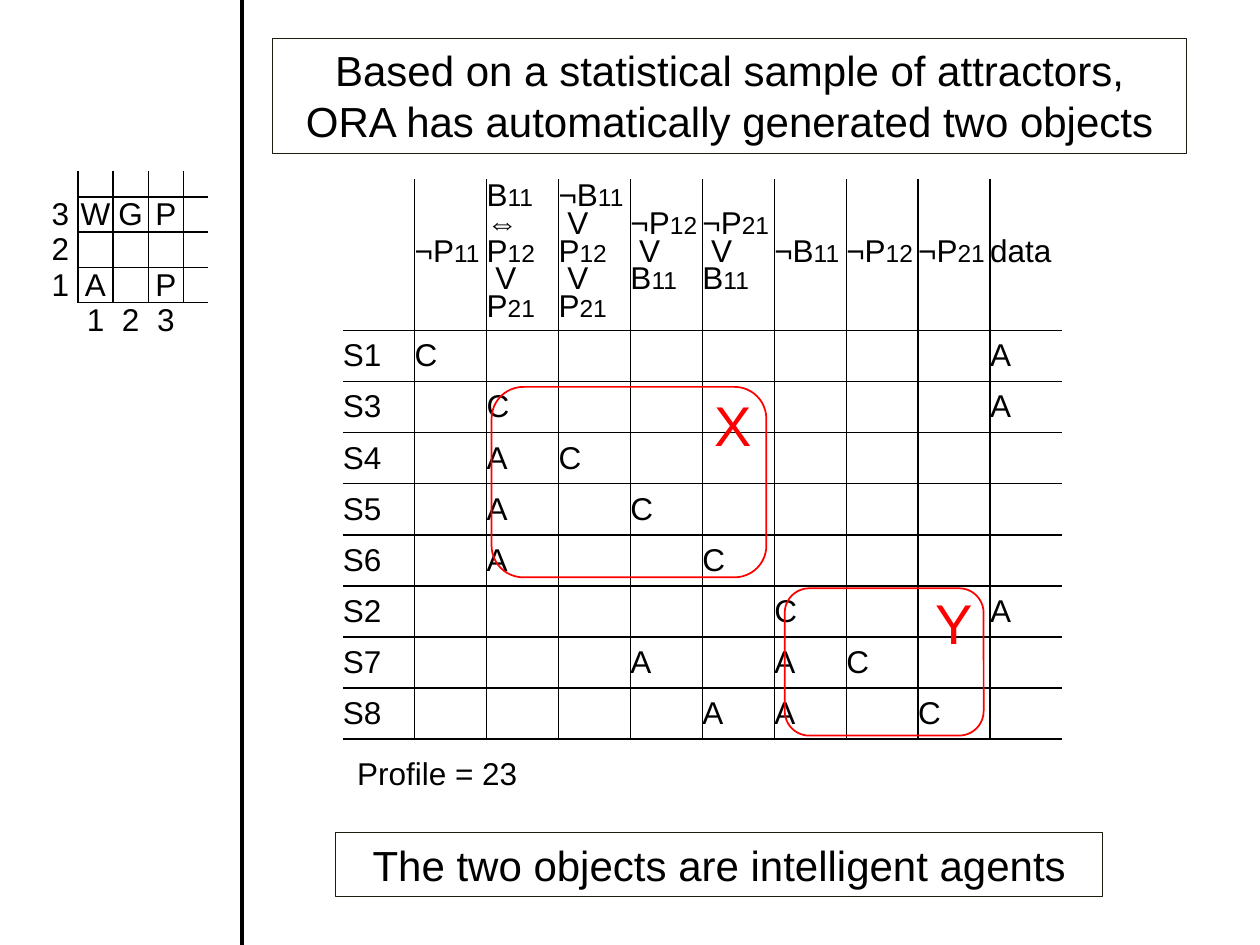
from dataclasses import dataclass

from lxml.etree import SubElement
from pptx import Presentation
from pptx.dml.color import RGBColor
from pptx.enum.shapes import MSO_CONNECTOR, MSO_SHAPE as Shp
from pptx.enum.text import MSO_ANCHOR as Anc, MSO_AUTO_SIZE as Auto, PP_ALIGN as Al
from pptx.oxml.ns import qn
from pptx.util import Cm, Pt

COLORS = {"ink": "000000", "frame": "1E1C11", "agent": "FF0000"}
DIGITS = "0123456789"


@dataclass
class Box:
    x: float
    y: float
    w: float
    h: float


@dataclass
class Grid:
    x: float
    y: float
    cols: list[float]
    rows: list[float]
    texts: dict[tuple[int, int], str]
    align: Al
    formula_head: bool
    ruled_edges: bool


@dataclass
class Agent:
    name: str
    box: Box
    label: Box


@dataclass
class Banner:
    text: str
    box: Box


def rgb(name: str) -> RGBColor:
    return RGBColor.from_string(COLORS[name])


def add_run(p, text: str, size: float, color: str = "ink") -> None:
    r = p.add_run()
    r.text = text
    r.font.size = Pt(size)
    r.font.name = "Arial"
    r.font.color.rgb = rgb(color)


def add_formula(tf, formula: str) -> None:
    for i, line in enumerate(formula.split("|")):
        p = tf.add_paragraph() if i else tf.paragraphs[0]
        p.line_spacing = Pt(16)
        stem = line.rstrip(DIGITS)
        add_run(p, stem, 18)
        if stem != line:
            add_run(p, line[len(stem):], 14)


def set_borders(cell, sides: dict[str, bool]) -> None:
    tc_pr = cell._tc.get_or_add_tcPr()
    for i, (side, shown) in enumerate(sides.items()):
        ln = SubElement(tc_pr, qn(f"a:ln{side}"), w=str(Pt(1)))
        tc_pr.insert(i, ln)
        if shown:
            fill = SubElement(ln, qn("a:solidFill"))
            SubElement(fill, qn("a:srgbClr"), val=COLORS["ink"])
        else:
            SubElement(ln, qn("a:noFill"))


def add_grid(s, g: Grid) -> None:
    last_row, last_col = len(g.rows) - 1, len(g.cols) - 1
    tbl = s.shapes.add_table(last_row + 1, last_col + 1, Cm(g.x), Cm(g.y),
                             Cm(sum(g.cols)), Cm(sum(g.rows))).table
    tbl.first_row = tbl.horz_banding = False
    for col, w in zip(tbl.columns, g.cols):
        col.width = Cm(w)
    for row, h in zip(tbl.rows, g.rows):
        row.height = Cm(h)
    for i in range(last_row + 1):
        for j in range(last_col + 1):
            cell = tbl.cell(i, j)
            cell.fill.background()
            cell.vertical_anchor = Anc.MIDDLE
            cell.margin_left = cell.margin_right = 0
            cell.margin_top = cell.margin_bottom = 0
            across = g.ruled_edges or j > 0
            down = g.ruled_edges or i < last_row
            set_borders(cell, {"L": down and j > 0, "R": down and j < last_col,
                               "T": across and i > 0, "B": across and down})
            tf, text = cell.text_frame, g.texts.get((i, j))
            p = tf.paragraphs[0]
            p.alignment = g.align
            if text is None:
                SubElement(p._p, qn("a:endParaRPr"), sz="1200")
            elif g.formula_head and i == 0:
                add_formula(tf, text)
            else:
                add_run(p, text, 18)


def add_outline(s, kind: Shp, box: Box, color: str, width: float):
    sp = s.shapes.add_shape(kind, Cm(box.x), Cm(box.y), Cm(box.w), Cm(box.h))
    sp.shadow.inherit = False
    sp.fill.background()
    sp.line.color.rgb = rgb(color)
    sp.line.width = Pt(width)
    return sp


def add_label(s, text: str, box: Box, size: float, color: str, anchor: Anc) -> None:
    sp = s.shapes.add_textbox(Cm(box.x), Cm(box.y), Cm(box.w), Cm(box.h))
    tf = sp.text_frame
    tf.word_wrap = True
    tf.vertical_anchor = anchor
    tf.margin_left = tf.margin_right = tf.margin_top = tf.margin_bottom = 0
    add_run(tf.paragraphs[0], text, size, color)


def add_banner(s, b: Banner) -> None:
    tf = add_outline(s, Shp.RECTANGLE, b.box, "frame", 0.75).text_frame
    tf.word_wrap = True
    tf.auto_size = Auto.SHAPE_TO_FIT_TEXT
    tf.vertical_anchor = Anc.TOP
    p = tf.paragraphs[0]
    p.alignment = Al.CENTER
    add_run(p, b.text, 24)


def add_divider(s, x: float, height: float) -> None:
    ln = s.shapes.add_connector(MSO_CONNECTOR.STRAIGHT, Cm(x), 0, Cm(x), Cm(height))
    ln.line.color.rgb = rgb("ink")
    ln.line.width = Pt(2)
    SubElement(ln._element.spPr, qn("a:effectLst"))


FORMULAS = ["¬P11", "B11|⇔|P12| V|P21", "¬B11| V|P12| V|P21", "¬P12| V|B11",
            "¬P21| V|B11", "¬B11", "¬P12", "¬P21", "data"]
STATES = [("S1", {1: "C", 9: "A"}), ("S3", {2: "C", 9: "A"}),
          ("S4", {2: "A", 3: "C"}), ("S5", {2: "A", 4: "C"}),
          ("S6", {2: "A", 5: "C"}), ("S2", {6: "C", 9: "A"}),
          ("S7", {4: "A", 6: "A", 7: "C"}), ("S8", {5: "A", 6: "A", 8: "C"})]
PROFILE = {(0, j): f for j, f in enumerate(FORMULAS, 1)}
for i, (state, marks) in enumerate(STATES, 1):
    PROFILE |= {(i, j): t for j, t in ({0: state} | marks).items()}
WORLD = {(1, 0): "3", (1, 1): "W", (1, 2): "G", (1, 3): "P", (2, 0): "2",
         (3, 0): "1", (3, 1): "A", (3, 3): "P",
         (4, 1): "1", (4, 2): "2", (4, 3): "3"}

GRIDS = [
    Grid(6.91, 3.61, [1.45] * 10, [3.05] + [1.03] * 8, PROFILE, Al.LEFT, True, True),
    Grid(0.86, 3.45, [0.71] * 4 + [0.5], [0.51] + [0.71] * 4, WORLD,
         Al.CENTER, False, False),
]
AGENTS = [
    Agent("X", Box(9.91, 7.8, 5.54, 3.84), Box(14.4, 7.87, 0.84, 1.37)),
    Agent("Y", Box(15.82, 11.86, 4.01, 2.97), Box(18.85, 11.86, 0.84, 1.37)),
]
BANNERS = [
    Banner("Based on a statistical sample of attractors, "
           "ORA has automatically generated two objects", Box(5.5, 0.78, 18.42, 2.31)),
    Banner("The two objects are intelligent agents", Box(6.77, 16.79, 15.46, 1.28)),
]


def main() -> None:
    prs = Presentation()
    prs.slide_width, prs.slide_height = Cm(25.4), Cm(19.05)
    s = prs.slides.add_slide(prs.slide_layouts[6])
    for grid in GRIDS:
        add_grid(s, grid)
    for agent in AGENTS:
        add_outline(s, Shp.ROUNDED_RECTANGLE, agent.box, "agent", 1)
        add_label(s, agent.name, agent.label, 32, "agent", Anc.MIDDLE)
    for banner in BANNERS:
        add_banner(s, banner)
    add_divider(s, 4.88, 19.05)
    add_label(s, "Profile = 23", Box(7.2, 15.21, 3.81, 0.84), 18, "ink", Anc.TOP)
    prs.save("out.pptx")


if __name__ == "__main__":
    main()
